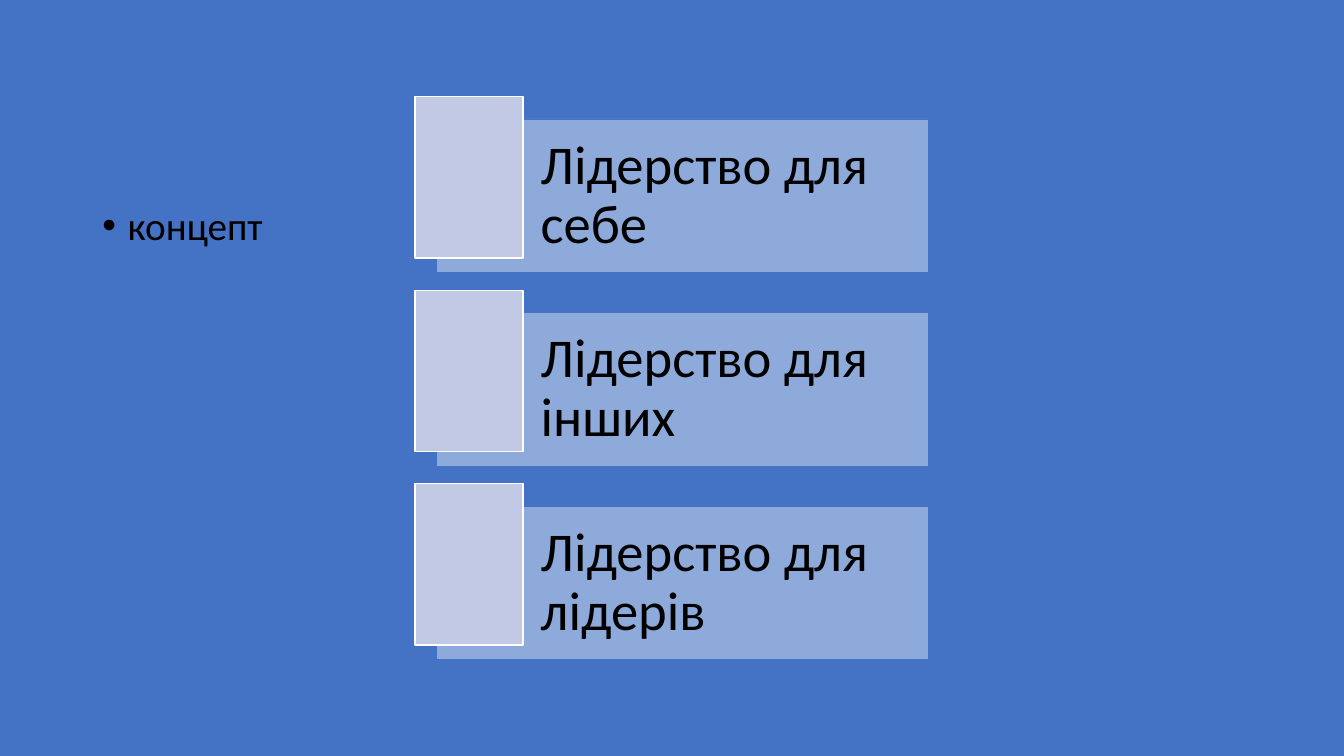
from lxml import etree
from pptx import Presentation
from pptx.dml.color import RGBColor
from pptx.enum.shapes import MSO_SHAPE
from pptx.enum.text import MSO_ANCHOR, PP_ALIGN
from pptx.oxml.ns import qn
from pptx.util import Pt

COLORS = {
    "background": "4472C4",
    "white": "FFFFFF",
    "tile": "C1C9E4",
    "text": "000000",
}
LEVELS = ["Лідерство для себе", "Лідерство для інших", "Лідерство для лідерів"]
FIRST_TOP, PITCH = 69.1, 138.25


def write(frame, text, size, before=0, after=0, anchor=MSO_ANCHOR.TOP,
          insets=(7.2, 3.6, 7.2, 3.6)):
    """Fill the frame with one paragraph and return that paragraph."""
    frame.word_wrap = True
    frame.vertical_anchor = anchor
    (frame.margin_left, frame.margin_top,
     frame.margin_right, frame.margin_bottom) = [Pt(inset) for inset in insets]
    paragraph = frame.paragraphs[0]
    paragraph.alignment = PP_ALIGN.LEFT
    paragraph.line_spacing = 0.9
    paragraph.space_before = Pt(before)
    paragraph.space_after = Pt(after)
    run = paragraph.add_run()
    run.text = text
    run.font.name = "Calibri"
    run.font.size = Pt(size)
    run.font.color.rgb = RGBColor.from_string(COLORS["text"])
    return paragraph


def add_box(shapes, left, top, width, height, fill, line, line_width):
    box = shapes.add_shape(MSO_SHAPE.RECTANGLE, Pt(left), Pt(top), Pt(width), Pt(height))
    box.shadow.inherit = False
    box.fill.solid()
    box.fill.fore_color.rgb = RGBColor.from_string(COLORS[fill])
    box.line.color.rgb = RGBColor.from_string(COLORS[line])
    box.line.width = Pt(line_width)
    return box


deck = Presentation()
deck.slide_width, deck.slide_height = Pt(960), Pt(540)
slide = deck.slides.add_slide(deck.slide_layouts[1])
slide.background.fill.solid()
slide.background.fill.fore_color.rgb = RGBColor.from_string(COLORS["background"])

# The slide shows no title
empty_title = slide.shapes.title.element
empty_title.getparent().remove(empty_title)

concept = slide.placeholders[1]
concept.left, concept.top, concept.width, concept.height = Pt(66), Pt(144), Pt(828), Pt(342.7)
concept_line = write(concept.text_frame, "концепт", 28, before=10)
bullet_format = concept_line._p.get_or_add_pPr()
bullet_format.set("marL", str(Pt(18)))
bullet_format.set("indent", str(-Pt(18)))
etree.SubElement(bullet_format, qn("a:buFont")).set("typeface", "Arial")
etree.SubElement(bullet_format, qn("a:buChar")).set("char", "•")

levels_diagram = slide.shapes.add_group_shape()
for index, level in enumerate(LEVELS):
    top = FIRST_TOP + index * PITCH
    panel = add_box(levels_diagram.shapes, 312, top + 15.9, 351, 109.8,
                    "white", "background", 0.5)
    panel_color = panel.fill._xPr.find(qn("a:solidFill"))[0]
    etree.SubElement(panel_color, qn("a:alpha")).set("val", "40000")
    write(panel.text_frame, level, 39, after=13.65, anchor=MSO_ANCHOR.MIDDLE,
          insets=(74.2, 11.5, 11.5, 11.5))
    add_box(levels_diagram.shapes, 296.6, top, 77, 115.2, "tile", "white", 1)

deck.save("out.pptx")
